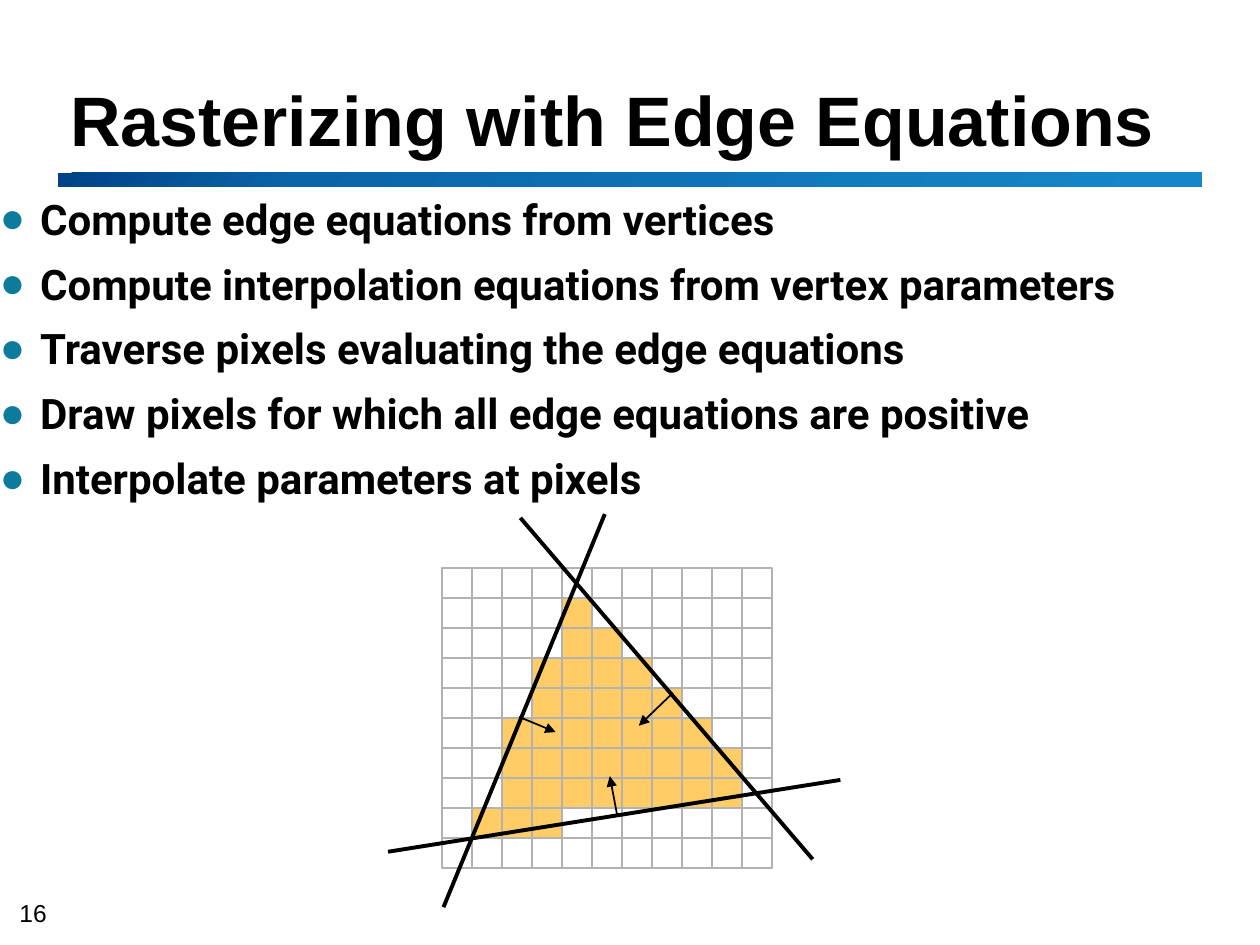
import pptx
import pptx.util
import pptx.dml.color
import pptx.enum.shapes
import pptx.enum.text
import pptx.oxml
import pptx.oxml.ns
from pptx.util import Inches
from lxml import etree

BLACK = "000000"
BULLETS = [
    "Compute edge equations from vertices",
    "Compute interpolation equations from vertex parameters",
    "Traverse pixels evaluating the edge equations",
    "Draw pixels for which all edge equations are positive",
    "Interpolate parameters at pixels",
]
GRID_LEFT, GRID_TOP = 3.51, 4.51
COLUMNS, ROWS = 11, 10
CELL = 2.62 / COLUMNS
COVERED_COLUMNS = {
    1: range(4, 5),
    2: range(4, 6),
    3: range(3, 7),
    4: range(3, 8),
    5: range(2, 9),
    6: range(2, 10),
    7: range(2, 10),
    8: range(1, 4),
}
EDGES = [
    (4.13, 4.11, 6.45, 6.82),
    (4.8, 4.08, 3.52, 7.2),
    (3.08, 6.76, 6.67, 6.19),
]
NORMALS = [
    (5.34, 5.5, 5.07, 5.76),
    (4.9, 6.48, 4.84, 6.16),
    (4.12, 5.69, 4.41, 5.81),
]


def color(value):
    return pptx.dml.color.RGBColor.from_string(value)


def add_child(parent, tag, **attributes):
    return etree.SubElement(parent, pptx.oxml.ns.qn(tag), attributes)


def add_text(page, place, lines, size, font_name, bold=False, margins=(0.1, 0.05),
             anchor=pptx.enum.text.MSO_ANCHOR.TOP, line_spacing=None):
    box = page.shapes.add_textbox(*map(Inches, place))
    frame = box.text_frame
    frame.word_wrap = True
    frame.vertical_anchor = anchor
    frame.margin_left = frame.margin_right = Inches(margins[0])
    frame.margin_top = frame.margin_bottom = Inches(margins[1])
    frame.text = "\n".join(lines)
    for para in frame.paragraphs:
        if line_spacing:
            para.line_spacing = pptx.util.Pt(line_spacing)
        for span in para.runs:
            span.font.size = pptx.util.Pt(size)
            span.font.name = font_name
            span.font.bold = bold
            span.font.color.rgb = color(BLACK)
    return frame


def add_bullets(frame):
    for index, para in enumerate(frame.paragraphs):
        para.space_before = pptx.util.Pt(6 if index else 0)
        para.space_after = pptx.util.Pt(4)
        properties = para._p.get_or_add_pPr()
        properties.set("marL", str(Inches(0.32)))
        properties.set("indent", str(-Inches(0.32)))
        bullet_color = add_child(properties, "a:buClr")
        add_child(bullet_color, "a:srgbClr", val="0C7B9C")
        add_child(properties, "a:buFont", typeface="Arial")
        add_child(properties, "a:buChar", char="●")


def add_rectangle(shapes, left, top, width, height):
    box = shapes.add_shape(pptx.enum.shapes.MSO_SHAPE.RECTANGLE,
                           *map(Inches, (left, top, width, height)))
    box.shadow.inherit = False
    return box


def add_gradient_bar(page):
    bar = add_rectangle(page.shapes, 0.46, 1.37, 9.08, 0.11)
    bar.line.fill.background()
    bar.fill.gradient()
    gradient = bar._element.spPr.find(pptx.oxml.ns.qn("a:gradFill"))
    for child in list(gradient):
        gradient.remove(child)
    stops = add_child(gradient, "a:gsLst")
    for percent, value in ((0, "004187"), (21, "0A64A8"), (96, "1487C8")):
        stop = add_child(stops, "a:gs", pos=str(percent * 1000))
        add_child(stop, "a:srgbClr", val=value)
    add_child(gradient, "a:lin", ang=str(45 * 60000), scaled="1")


def add_pixel_grid(shapes):
    for row in range(ROWS):
        for column in range(COLUMNS):
            pixel = add_rectangle(shapes, GRID_LEFT + column * CELL,
                                  GRID_TOP + row * CELL, CELL, CELL)
            covered = column in COVERED_COLUMNS.get(row, ())
            pixel.fill.solid()
            pixel.fill.fore_color.rgb = color("FFCC66" if covered else "FFFFFF")
            pixel.line.color.rgb = color("B2B2B2")
            pixel.line.width = pptx.util.Pt(1)


def add_line(shapes, ends, width, arrow=False):
    line = shapes.add_connector(pptx.enum.shapes.MSO_CONNECTOR.STRAIGHT,
                                *map(Inches, ends))
    line.line.color.rgb = color(BLACK)
    line.line.width = pptx.util.Pt(width)
    if arrow:
        add_child(line.line._get_or_add_ln(), "a:tailEnd", type="triangle")
    add_child(line._element.spPr, "a:effectLst")


def main():
    deck = pptx.Presentation()
    deck.slide_width, deck.slide_height = Inches(10), Inches(7.5)
    page = deck.slides.add_slide(deck.slide_layouts[6])
    bottom = pptx.enum.text.MSO_ANCHOR.BOTTOM

    add_text(page, (0.1, 7.13, 0.34, 0.23), [" 16"], 14, "Arial",
             margins=(0, 0), anchor=bottom)
    add_gradient_bar(page)
    add_text(page, (0.46, 0.33, 9.06, 0.99), ["Rasterizing with Edge Equations"],
             40, "Arial", bold=True, anchor=bottom, line_spacing=36)
    body = add_text(page, (-0.1, 1.51, 10.18, 5.54), BULLETS, 24, "Roboto",
                    bold=True, line_spacing=27)
    add_bullets(body)

    figure = page.shapes.add_group_shape().shapes
    add_pixel_grid(figure)
    for edge in EDGES:
        add_line(figure, edge, 2.25)
    for normal in NORMALS:
        add_line(figure, normal, 1, arrow=True)

    deck.save("out.pptx")


if __name__ == "__main__":
    main()
